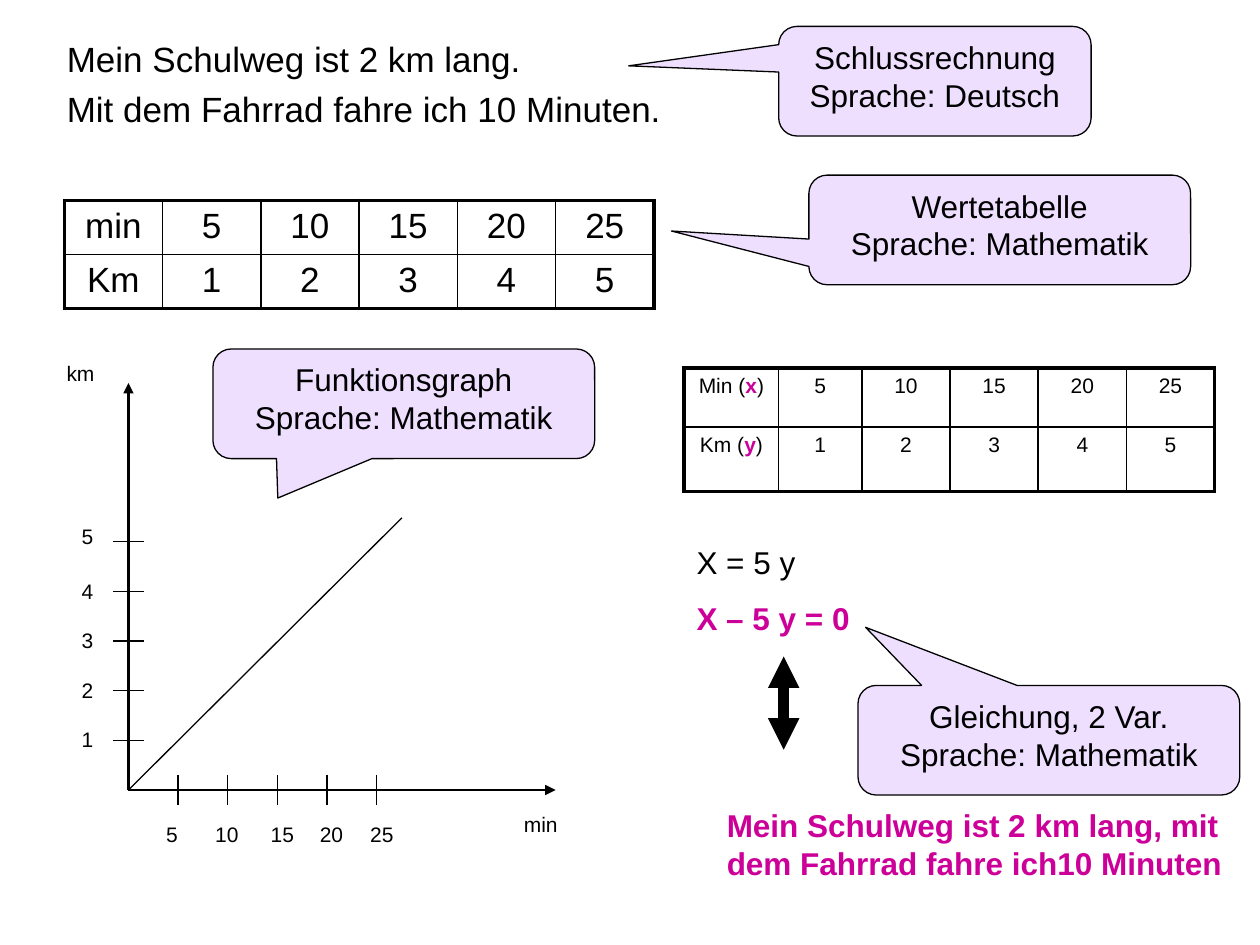
from dataclasses import dataclass

from lxml.etree import SubElement
from pptx import Presentation
from pptx.dml.color import RGBColor
from pptx.enum.shapes import MSO_CONNECTOR, MSO_SHAPE
from pptx.enum.text import MSO_ANCHOR, MSO_AUTO_SIZE, PP_ALIGN
from pptx.oxml import parse_xml
from pptx.oxml.ns import nsdecls, qn
from pptx.util import Inches, Pt

COLORS = {"ink": "000000", "accent": "CC0099", "callout": "CC99FF"}
FONT = "Arial"
OX, OY = 1.02, 6.27
STEP = 1.97 / 5
TICK = 0.12


@dataclass
class Callout:
    x: float
    y: float
    w: float
    tip: tuple[float, float]
    lines: list[str]


@dataclass
class Label:
    text: str
    x: float
    y: float
    w: float


@dataclass
class ValueTable:
    x: float
    y: float
    cols: list[float]
    rows: list[float]
    size: int
    values: list[list[str]]
    variables: str


CALLOUTS = [
    Callout(6.18, 0.21, 2.48, (-0.98, -0.14), ["Schlussrechnung", "Sprache: Deutsch"]),
    Callout(6.42, 1.39, 3.03, (-0.86, 0.01), ["Wertetabelle", "Sprache: Mathematik"]),
    Callout(1.69, 2.77, 3.03, (-0.33, 0.86), ["Funktionsgraph", "Sprache: Mathematik"]),
    Callout(6.81, 5.44, 3.03, (-0.48, -1.03), ["Gleichung, 2 Var.", "Sprache: Mathematik"]),
]
MINUTES = ["5", "10", "15", "20", "25"]
KM = ["1", "2", "3", "4", "5"]
TABLES = [
    ValueTable(0.51, 1.59, [0.78] * 6, [0.43] * 2, 20,
               [["min"] + MINUTES, ["Km"] + KM], ""),
    ValueTable(5.43, 2.92, [0.75, 0.66] + [0.7] * 4, [0.47, 0.51], 12,
               [["Min (x)"] + MINUTES, ["Km (y)"] + KM], "xy"),
]
LABELS = [Label("min", 4.06, 6.39, 0.47), Label("km", 0.43, 2.81, 0.47)]
LABELS += [Label(t, x, 6.47, 0.43) for t, x in zip(MINUTES, [1.22, 1.61, 2.05, 2.44, 2.84])]
LABELS += [Label(t, 0.55, y, 0.36) for t, y in zip(KM, [5.72, 5.33, 4.93, 4.54, 4.11])]


def rgb(name: str) -> RGBColor:
    return RGBColor.from_string(COLORS[name])


def style(p, size: int, color: str = "ink", bold: bool = False,
          before: float = 0, align=PP_ALIGN.LEFT) -> None:
    p.alignment = align
    p.space_before = Pt(before)
    p.font.name = FONT
    p.font.size = Pt(size)
    p.font.bold = bold
    p.font.color.rgb = rgb(color)


def add_text(shapes, x: float, y: float, w: float, h: float, lines: list[str]):
    tf = shapes.add_textbox(Inches(x), Inches(y), Inches(w), Inches(h)).text_frame
    tf.word_wrap = True
    tf.text = "\n".join(lines)
    return tf


def add_line(shapes, x1: float, y1: float, x2: float, y2: float,
             width: float = 0.75, arrows: tuple[str, ...] = ()) -> None:
    cn = shapes.add_connector(MSO_CONNECTOR.STRAIGHT, Inches(x1), Inches(y1),
                              Inches(x2), Inches(y2))
    cn.line.color.rgb = rgb("ink")
    cn.line.width = Pt(width)
    ln = cn.line._get_or_add_ln()
    for end in arrows:
        SubElement(ln, qn(f"a:{end}"), type="triangle")
    SubElement(cn._element.spPr, qn("a:effectLst"))


def add_callout(shapes, c: Callout) -> None:
    sp = shapes.add_shape(MSO_SHAPE.ROUNDED_RECTANGULAR_CALLOUT, Inches(c.x), Inches(c.y),
                          Inches(c.w), Inches(0.87))
    sp.adjustments[0], sp.adjustments[1] = c.tip
    sp.shadow.inherit = False
    sp.fill.solid()
    sp.fill.fore_color.rgb = rgb("callout")
    color = sp._element.spPr.find(".//" + qn("a:srgbClr"))
    SubElement(color, qn("a:alpha"), val="31000")
    sp.line.color.rgb = rgb("ink")
    sp.line.width = Pt(0.75)
    tf = sp.text_frame
    tf.vertical_anchor = MSO_ANCHOR.TOP
    tf.text = "\n".join(c.lines)
    for p in tf.paragraphs:
        style(p, 18, align=PP_ALIGN.CENTER)


def set_borders(cell, outer: dict[str, bool]) -> None:
    tcPr = cell._tc.get_or_add_tcPr()
    for i, (side, edge) in enumerate(outer.items()):
        width = Pt(2.25 if edge else 1)
        tcPr.insert(i, parse_xml(
            f'<a:ln{side} {nsdecls("a")} w="{width}"><a:solidFill>'
            f'<a:srgbClr val="{COLORS["ink"]}"/></a:solidFill></a:ln{side}>'))


def add_value_table(shapes, t: ValueTable) -> None:
    n_rows, n_cols = len(t.rows), len(t.cols)
    table = shapes.add_table(n_rows, n_cols, Inches(t.x), Inches(t.y),
                             Inches(sum(t.cols)), Inches(sum(t.rows))).table
    table.first_row = table.horz_banding = False
    for col, w in zip(table.columns, t.cols):
        col.width = Inches(w)
    for row, h in zip(table.rows, t.rows):
        row.height = Inches(h)
    for r, values in enumerate(t.values):
        for c, value in enumerate(values):
            cell = table.cell(r, c)
            cell.fill.background()
            set_borders(cell, {"L": c == 0, "R": c == n_cols - 1,
                               "T": r == 0, "B": r == n_rows - 1})
            p = cell.text_frame.paragraphs[0]
            style(p, t.size, before=t.size * 0.23, align=PP_ALIGN.CENTER)
            if c == 0 and t.variables:
                variable = t.variables[r]
                head, tail = value.split(variable)
                for text in (head, variable, tail):
                    run = p.add_run()
                    run.text = text
                    if text == variable:
                        run.font.bold = True
                        run.font.color.rgb = rgb("accent")
            else:
                p.add_run().text = value


def add_graph(shapes) -> None:
    add_line(shapes, OX, OY, OX, 3.04, 1.5, ("tailEnd",))
    add_line(shapes, OX, OY, 4.41, OY, 1.5, ("tailEnd",))
    for i in range(1, 6):
        x, y = OX + STEP * i, OY - STEP * i
        add_line(shapes, x, OY - TICK, x, OY + TICK)
        add_line(shapes, OX - TICK, y, OX + TICK, y)
    for label in LABELS:
        tf = add_text(shapes, label.x, label.y, label.w, 0.3, [label.text])
        tf.margin_right = 0
        style(tf.paragraphs[0], 12, before=7)
    add_line(shapes, OX, OY, 3.19, 4.11)


def main() -> None:
    prs = Presentation()
    prs.slide_width, prs.slide_height = Inches(10), Inches(7.5)
    slide = prs.slides.add_slide(prs.slide_layouts[5])
    shapes = slide.shapes

    title = shapes.title
    title.left, title.top = Inches(0.43), Inches(0.25)
    title.width, title.height = Inches(4.92), Inches(0.87)
    tf = title.text_frame
    tf.auto_size = MSO_AUTO_SIZE.NONE
    tf.vertical_anchor = MSO_ANCHOR.TOP
    tf.text = "Mein Schulweg ist 2 km lang.\nMit dem Fahrrad fahre ich 10 Minuten."
    for p in tf.paragraphs:
        style(p, 20, before=4.6)

    for table in TABLES:
        add_value_table(shapes, table)
    add_graph(shapes.add_group_shape().shapes)

    equations = add_text(shapes, 5.43, 4.26, 1.57, 0.85, ["X = 5 y", "X – 5 y = 0"])
    style(equations.paragraphs[0], 18, before=10.3)
    style(equations.paragraphs[1], 18, "accent", True, 10.3)
    sentence = add_text(shapes, 5.67, 6.35, 4.13, 0.7,
                        ["Mein Schulweg ist 2 km lang, mit dem Fahrrad fahre ich10 Minuten"])
    style(sentence.paragraphs[0], 18, "accent", True, 4.1)
    add_line(shapes, 6.22, 5.21, 6.22, 5.95, 6, ("headEnd", "tailEnd"))

    for callout in CALLOUTS:
        add_callout(shapes, callout)
    prs.save("out.pptx")


if __name__ == "__main__":
    main()
